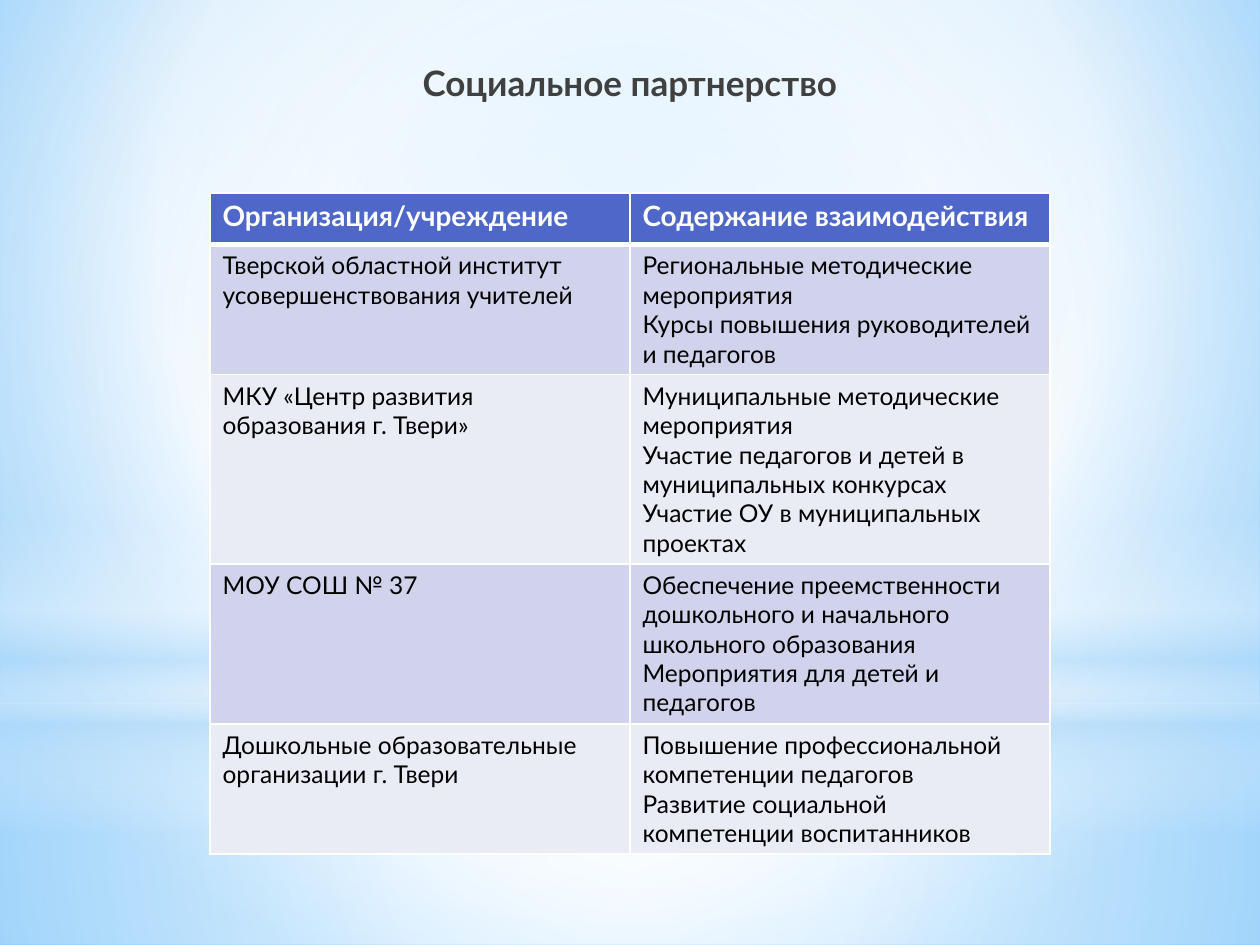
from pptx import Presentation, util as u
from pptx.dml.color import RGBColor
from pptx.enum import shapes as sh, text as tx
from pptx.oxml import parse_xml
from pptx.oxml.ns import qn, nsdecls

W, H = 10, 7.5
FONT = "Lato"
WHITE, SKY = "FFFFFF", "B4DCFA"
HEAD, BANDS = "4E67C8", ("D0D3EB", "E9EBF5")
MID = (50, 50, 50, 50)

ROWS = [
    (["Организация/учреждение"], ["Содержание взаимодействия"]),
    (["Тверской областной институт усовершенствования учителей"],
     ["Региональные методические мероприятия",
      "Курсы повышения руководителей и педагогов"]),
    (["МКУ «Центр развития образования г. Твери»"],
     ["Муниципальные методические мероприятия",
      "Участие педагогов и детей в муниципальных конкурсах",
      "Участие ОУ в муниципальных проектах"]),
    (["МОУ СОШ № 37"],
     ["Обеспечение преемственности дошкольного и начального школьного образования",
      "Мероприятия для детей и педагогов"]),
    (["Дошкольные образовательные организации г. Твери"],
     ["Повышение профессиональной компетенции педагогов",
      "Развитие социальной компетенции воспитанников"]),
]
TALL = [0.41, 1.03, 1.5, 1.27, 1.03]

# Background layers: preset, top and height, stops (place, colour, opacity), centre
LAYERS = [
    ("RECTANGLE", 5.58, 1.92, [(0, WHITE, 91), (37, WHITE, 76), (100, SKY, 79)], MID),
    ("RECTANGLE", 0, 5.58, [(0, WHITE, 89), (48, WHITE, 62), (100, SKY, 79)], MID),
    ("RECTANGLE", 4.12, 2.5, [(0, WHITE, 0), (29, WHITE, 30), (45, SKY, 40),
                              (55, WHITE, 26), (65, SKY, 60), (100, WHITE, 0)], None),
    ("OVAL", 1.75, 5.58, [(0, WHITE, 100), (56, WHITE, 0)], MID),
]


def rgb(code):
    return RGBColor.from_string(code)


def blend(fill, host, stops, mid):
    """Gradient with opacity: round about mid, or downwards without it."""
    fill.gradient()
    old = host.find(".//" + qn("a:gradFill"))
    marks = "".join(
        f'<a:gs pos="{at * 1000}"><a:srgbClr val="{code}">'
        f'<a:alpha val="{seen * 1000}"/></a:srgbClr></a:gs>'
        for at, code, seen in stops)
    if mid:
        rect = " ".join(f'{s}="{v * 1000}"' for s, v in zip("ltrb", mid))
        way = f'<a:path path="circle"><a:fillToRect {rect}/></a:path>'
    else:
        way = '<a:lin ang="5400000" scaled="0"/>'
    new = parse_xml(f'<a:gradFill {nsdecls("a")} rotWithShape="1">'
                    f'<a:gsLst>{marks}</a:gsLst>{way}</a:gradFill>')
    old.getparent().replace(old, new)


def write(para, words, size, code, bold):
    run = para.add_run()
    run.text = words
    font = run.font
    font.name, font.size, font.bold = FONT, u.Pt(size), bold
    font.color.rgb = rgb(code)


def edge(cell, widths):
    """White borders, widths in points: left, right, top, bottom."""
    props = cell._tc.get_or_add_tcPr()
    for i, (side, wide) in enumerate(zip("LRTB", widths)):
        props.insert(i, parse_xml(
            f'<a:ln{side} {nsdecls("a")} w="{u.Pt(wide)}"><a:solidFill>'
            f'<a:srgbClr val="{WHITE}"/></a:solidFill></a:ln{side}>'))


def backdrop(slide):
    blend(slide.background.fill, slide.element,
          [(0, "9ED5FF", 100), (60, WHITE, 100), (100, "5BB9FF", 100)],
          (20, 10, 20, 60))
    for kind, top, tall, stops, mid in LAYERS:
        part = slide.shapes.add_shape(
            getattr(sh.MSO_SHAPE, kind), 0, u.Inches(top), u.Inches(W), u.Inches(tall))
        part.shadow.inherit = False
        part.line.fill.background()
        blend(part.fill, part.element, stops, mid)


def heading(slide, box):
    title = slide.shapes.title
    title.left, title.top, title.width, title.height = map(u.Inches, box)
    slide.shapes.element.append(title.element)  # in front of the backdrop
    frame = title.text_frame
    frame.word_wrap = True
    frame.auto_size = tx.MSO_AUTO_SIZE.NONE
    frame.vertical_anchor = tx.MSO_ANCHOR.TOP
    para = frame.paragraphs[0]
    para.alignment = tx.PP_ALIGN.CENTER
    write(para, "Социальное партнерство", 20, "404040", True)


def partners(slide, box):
    grid = slide.shapes.add_table(len(ROWS), 2, *map(u.Inches, box)).table
    for col in grid.columns:
        col.width = u.Inches(box[2] / 2)
    for r, (row, tall) in enumerate(zip(ROWS, TALL)):
        grid.rows[r].height = u.Inches(tall)
        top = r == 0
        look = (16, WHITE, True) if top else (14, "000000", False)
        for c, lines in enumerate(row):
            cell = grid.cell(r, c)
            cell.fill.solid()
            cell.fill.fore_color.rgb = rgb(HEAD if top else BANDS[(r - 1) % 2])
            edge(cell, (1, 1, 3 if r == 1 else 1, 3 if top else 1))
            frame = cell.text_frame
            for i, words in enumerate(lines):
                para = frame.add_paragraph() if i else frame.paragraphs[0]
                write(para, words, *look)


def main():
    deck = Presentation()
    deck.slide_width, deck.slide_height = u.Inches(W), u.Inches(H)
    slide = deck.slides.add_slide(deck.slide_layouts[5])
    backdrop(slide)
    heading(slide, (0.51, 0.44, 8.98, 6.61))
    partners(slide, (W / 6, 1.53, W * 2 / 3, sum(TALL)))
    deck.save("out.pptx")


if __name__ == "__main__":
    main()
